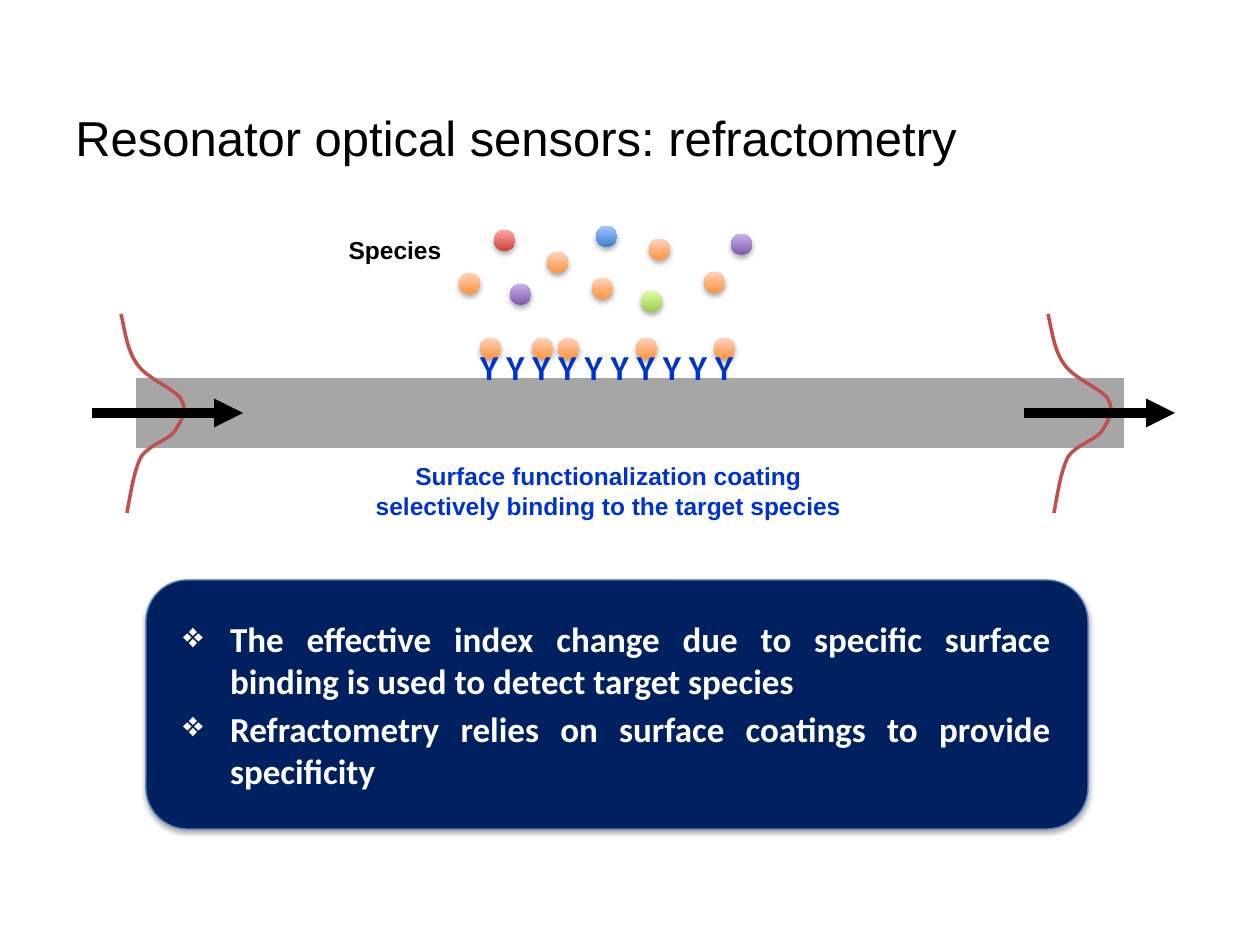
"""Build the slide on refractometry with resonator optical sensors."""
import dataclasses
import typing

import lxml.etree
import pptx
import pptx.dml.color
import pptx.enum.shapes
import pptx.enum.text
import pptx.oxml.ns
import pptx.util

SCALE = 914400 / 126
SHAPE = pptx.enum.shapes.MSO_SHAPE
ALIGN = pptx.enum.text.PP_ALIGN
ANCHOR = pptx.enum.text.MSO_ANCHOR
ORANGE = ("FF953E", "FFD2BD")
PURPLE = ("7F5BAB", "C8B0ED")
BLUE = ("3F80CE", "A4C4FF")
GREEN = ("A0CA4A", "DAFFA5")
RED = ("D1403C", "FFA6A5")
DOT_SIZE = 21
BINDING_LEFT, BINDING_TOP, BINDING_PITCH = 480, 338, 26
BOUND_SITES = (0, 2, 3, 6, 9)
MODE_START = (121, 314)
MODE_CURVE = (
    (125, 331), (127, 350), (137, 364),
    (147, 379), (175, 389), (181, 399),
    (188, 411), (181, 421), (175, 431),
    (169, 440), (150, 444), (141, 457),
    (134, 471), (131, 491), (127, 513),
)
MODE_SHIFT = 927
ARROW_STARTS = (92, 1024)
ARROW_LENGTH, ARROW_Y = 151, 413


@dataclasses.dataclass(frozen=True)
class Box:
    left: int
    top: int
    width: int
    height: int


@dataclasses.dataclass(frozen=True)
class Dot:
    left: int
    top: int
    shades: tuple[str, str]


@dataclasses.dataclass(frozen=True)
class Label:
    text: str
    box: Box
    font: dict[str, typing.Any]
    color: str
    align: ALIGN = ALIGN.CENTER
    anchor: ANCHOR = ANCHOR.TOP
    wrap: bool = True


HEADING = {"name": "Arial", "size": pptx.util.Pt(28)}
CAPTION = {"name": "Arial", "size": pptx.util.Pt(14), "bold": True}
BODY = {"name": "Calibri", "size": pptx.util.Pt(20), "bold": True}

FREE_DOTS = (
    Dot(510, 284, PURPLE), Dot(731, 234, PURPLE), Dot(596, 226, BLUE),
    Dot(641, 291, GREEN), Dot(494, 230, RED), Dot(547, 252, ORANGE),
    Dot(592, 278, ORANGE), Dot(649, 239, ORANGE), Dot(704, 272, ORANGE),
    Dot(459, 273, ORANGE),
)
LABELS = (
    Label("Resonator optical sensors: refractometry", Box(63, 63, 1134, 147),
          HEADING, "000000", ALIGN.LEFT, ANCHOR.MIDDLE),
    Label("Y Y Y Y Y Y Y Y Y Y", Box(467, 339, 280, 55), BODY, "0033CC", wrap=False),
    Label("Surface functionalization coating selectively binding to the target species",
          Box(353, 455, 511, 72), CAPTION, "0033CC"),
    Label("Species", Box(330, 229, 130, 43), CAPTION, "000000"),
)
FINDINGS = (
    "The effective index change due to specific surface binding is used to detect target species",
    "Refractometry relies on surface coatings to provide specificity",
)


def px(n: float) -> int:
    return round(n * SCALE)


def rgb(value: str) -> pptx.dml.color.RGBColor:
    return pptx.dml.color.RGBColor.from_string(value)


def place(box: Box) -> tuple[int, ...]:
    return tuple(px(n) for n in dataclasses.astuple(box))


def add_xml(parent: typing.Any, tag: str, **attrs: str) -> typing.Any:
    return lxml.etree.SubElement(parent, pptx.oxml.ns.qn(tag), attrs)


def apply_font(font: typing.Any, values: dict[str, typing.Any], color: str) -> None:
    for name, value in values.items():
        setattr(font, name, value)
    font.color.rgb = rgb(color)


def add_shape(s: typing.Any, kind: SHAPE, box: Box) -> typing.Any:
    sp = s.shapes.add_shape(kind, *place(box))
    sp.shadow.inherit = False
    sp.line.fill.background()
    return sp


def add_shadow(sp: typing.Any) -> None:
    effects = sp._element.spPr.find(pptx.oxml.ns.qn("a:effectLst"))
    shadow = add_xml(effects, "a:outerShdw", blurRad="40000", dist="23000",
                     dir="5400000", rotWithShape="0")
    add_xml(add_xml(shadow, "a:srgbClr", val="000000"), "a:alpha", val="35000")


def add_waveguide(s: typing.Any) -> None:
    sp = add_shape(s, SHAPE.RECTANGLE, Box(136, 378, 988, 70))
    sp.fill.solid()
    sp.fill.fore_color.rgb = rgb("A6A6A6")


def add_mode(s: typing.Any, shift: int) -> None:
    builder = s.shapes.build_freeform(MODE_START[0] + shift, MODE_START[1], SCALE)
    builder.add_line_segments([(x + shift, y) for x, y in MODE_CURVE], close=False)
    sp = builder.convert_to_shape()
    sp.shadow.inherit = False
    sp.fill.background()
    sp.line.color.rgb = rgb("C0504D")
    sp.line.width = pptx.util.Pt(2)
    outline = next(sp._element.iter(pptx.oxml.ns.qn("a:path")))
    segments = outline.findall(pptx.oxml.ns.qn("a:lnTo"))
    for i in range(0, len(segments), 3):
        curve = add_xml(outline, "a:cubicBezTo")
        for segment in segments[i:i + 3]:
            curve.append(segment[0])
            outline.remove(segment)


def add_arrow(s: typing.Any, left: int) -> None:
    line = s.shapes.add_connector(pptx.enum.shapes.MSO_CONNECTOR.STRAIGHT, px(left),
                                  px(ARROW_Y), px(left + ARROW_LENGTH), px(ARROW_Y))
    line.line.color.rgb = rgb("000000")
    line.line.width = pptx.util.Pt(5.5)
    add_xml(line.line._get_or_add_ln(), "a:tailEnd", type="triangle")
    add_xml(line._element.spPr, "a:effectLst")


def add_dot(s: typing.Any, dot: Dot) -> None:
    sp = add_shape(s, SHAPE.OVAL, Box(dot.left, dot.top, DOT_SIZE, DOT_SIZE))
    sp.fill.gradient()
    sp.fill.gradient_angle = 90
    for stop, shade in zip(sp.fill.gradient_stops, dot.shades):
        stop.color.rgb = rgb(shade)
    add_shadow(sp)


def add_label(s: typing.Any, label: Label) -> None:
    tf = s.shapes.add_textbox(*place(label.box)).text_frame
    tf.word_wrap = label.wrap
    tf.vertical_anchor = label.anchor
    p = tf.paragraphs[0]
    p.alignment = label.align
    r = p.add_run()
    r.text = label.text
    apply_font(r.font, label.font, label.color)


def add_findings(s: typing.Any) -> None:
    sp = add_shape(s, SHAPE.ROUNDED_RECTANGLE, Box(146, 580, 942, 249))
    sp.fill.solid()
    sp.fill.fore_color.rgb = rgb("002060")
    sp.line.color.rgb = rgb("4B7EBC")
    sp.line.width = pptx.util.Pt(0.75)
    add_shadow(sp)
    tf = sp.text_frame
    frame = {"word_wrap": True, "vertical_anchor": ANCHOR.MIDDLE,
             "margin_left": px(25), "margin_right": px(25)}
    for name, value in frame.items():
        setattr(tf, name, value)
    for i, text in enumerate(FINDINGS):
        p = tf.add_paragraph() if i else tf.paragraphs[0]
        p.alignment = ALIGN.JUSTIFY
        if i:
            p.space_before = pptx.util.Pt(3)
        props = p._p.get_or_add_pPr()
        props.set("marL", str(px(47)))
        props.set("indent", str(px(-47)))
        add_xml(props, "a:buChar", char="❖")
        r = p.add_run()
        r.text = text
        apply_font(r.font, BODY, "FFFFFF")


def main() -> None:
    prs = pptx.Presentation()
    prs.slide_width, prs.slide_height = px(1260), px(945)
    s = prs.slides.add_slide(prs.slide_layouts[6])
    add_waveguide(s)
    for shift, start in zip((0, MODE_SHIFT), ARROW_STARTS):
        add_mode(s, shift)
        add_arrow(s, start)
    bound = [Dot(BINDING_LEFT + site * BINDING_PITCH, BINDING_TOP, ORANGE) for site in BOUND_SITES]
    for dot in (*bound, *FREE_DOTS):
        add_dot(s, dot)
    for label in LABELS:
        add_label(s, label)
    add_findings(s)
    prs.save("out.pptx")


if __name__ == "__main__":
    main()
